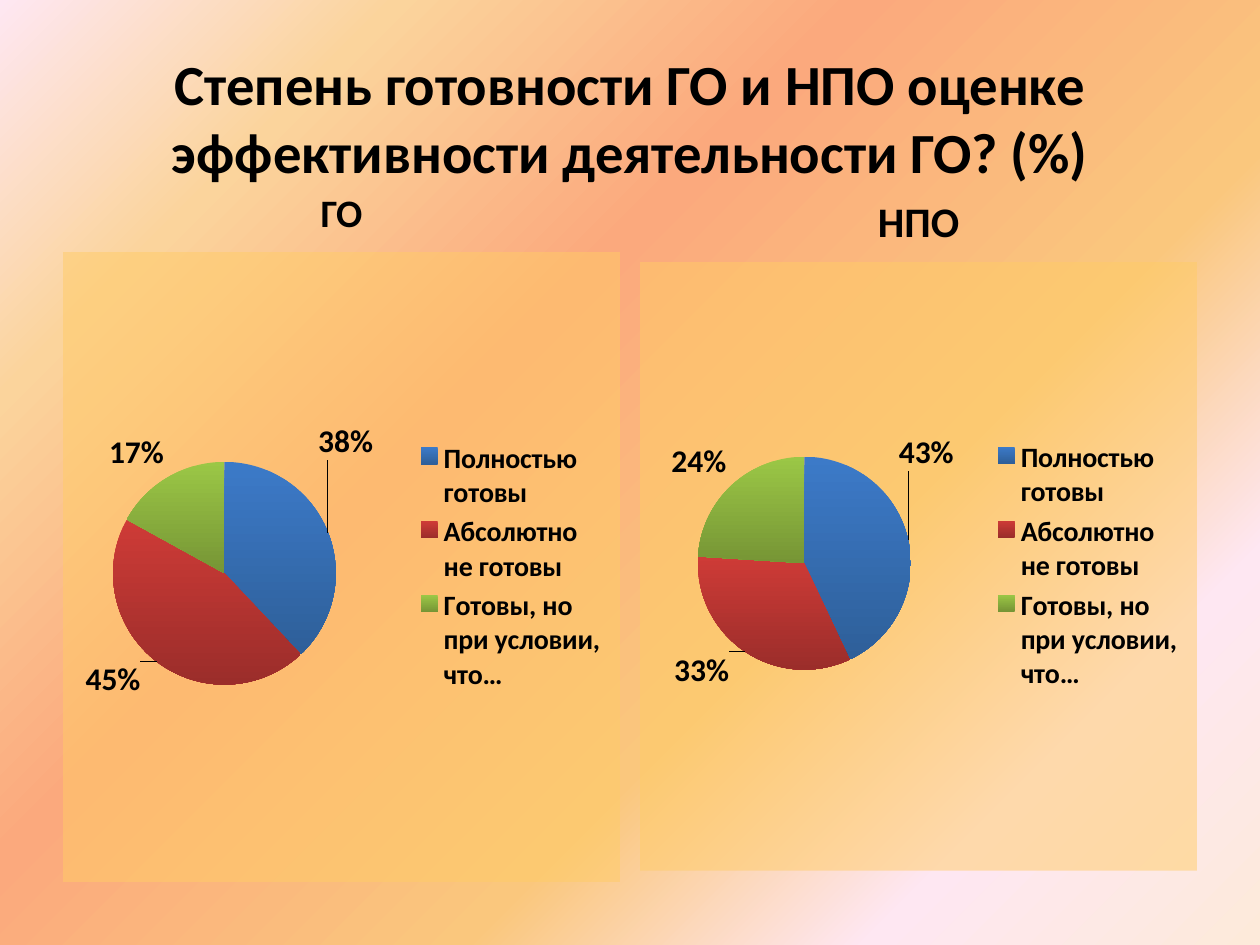
from dataclasses import dataclass

from lxml.etree import SubElement
from pptx import Presentation
from pptx.chart.data import CategoryChartData
from pptx.dml.color import RGBColor
from pptx.enum.chart import XL_CHART_TYPE, XL_LABEL_POSITION, XL_LEGEND_POSITION
from pptx.enum.text import MSO_ANCHOR, PP_ALIGN
from pptx.oxml import parse_xml
from pptx.oxml.ns import nsdecls, qn
from pptx.util import Inches, Pt

BLACK = RGBColor(0x00, 0x00, 0x00)
PANEL = RGBColor(0xFF, 0xCC, 0x66)
SLICES = (
    (RGBColor(0x3C, 0x7A, 0xC8), RGBColor(0x2E, 0x5F, 0x99)),
    (RGBColor(0xCE, 0x3B, 0x37), RGBColor(0x9B, 0x2D, 0x2A)),
    (RGBColor(0x9B, 0xC7, 0x46), RGBColor(0x76, 0x95, 0x35)),
)
BACKGROUND = (
    (0, RGBColor(0xFD, 0xEA, 0xDA)),
    (18, RGBColor(0xFE, 0xE7, 0xF2)),
    (36, RGBColor(0xFA, 0xC7, 0x7D)),
    (61, RGBColor(0xFB, 0xA9, 0x7D)),
    (82, RGBColor(0xFB, 0xD4, 0x9C)),
    (100, RGBColor(0xFE, 0xE7, 0xF2)),
)
CATEGORIES = ("Полностью готовы", "Абсолютно не готовы", "Готовы, но при условии, что…")
LABEL_OFFSETS = ((-0.03, -0.11), (-0.02, -0.01), (0, 0))


@dataclass(frozen=True)
class Box:
    left: float
    top: float
    width: float
    height: float

    def emu(self) -> tuple:
        return tuple(Inches(v) for v in (self.left, self.top, self.width, self.height))


@dataclass(frozen=True)
class Heading:
    text: str
    box: Box
    size: float
    anchor: MSO_ANCHOR = MSO_ANCHOR.BOTTOM


@dataclass(frozen=True)
class Pie:
    box: Box
    values: tuple
    plot: Box


HEADINGS = (
    Heading("Степень готовности ГО и НПО оценке эффективности деятельности ГО? (%)",
            Box(0.5, 0.3, 9, 1.25), 32.4, MSO_ANCHOR.MIDDLE),
    Heading("ГО", Box(0.5, 1.5, 4.42, 0.42), 22.2),
    Heading("НПО", Box(5.08, 1.42, 4.42, 0.58), 24),
)
PIES = (
    Pie(Box(5.08, 2.08, 4.42, 4.83), (43, 33, 24), Box(0.1, 0.32, 0.39, 0.35)),
    Pie(Box(0.5, 2, 4.42, 5), (38, 45, 17), Box(0.09, 0.33, 0.4, 0.36)),
)


def set_font(font, size: float, bold: bool = True) -> None:
    for name, value in {"name": "Calibri", "size": Pt(size), "bold": bold}.items():
        setattr(font, name, value)
    font.color.rgb = BLACK


def paint_background(s) -> None:
    fill = s.background.fill
    fill.gradient()
    fill.gradient_angle = 135
    stops = s.element.find(".//" + qn("a:gsLst"))
    for stop in list(stops):
        stops.remove(stop)
    for position, color in BACKGROUND:
        stop = SubElement(stops, qn("a:gs"), pos=str(position * 1000))
        SubElement(stop, qn("a:srgbClr"), val=str(color))


def add_heading(s, heading: Heading) -> None:
    sp = s.shapes.add_textbox(*heading.box.emu())
    tf = sp.text_frame
    for name, value in {"word_wrap": True, "vertical_anchor": heading.anchor}.items():
        setattr(tf, name, value)
    p = tf.paragraphs[0]
    p.alignment = PP_ALIGN.CENTER
    r = p.add_run()
    r.text = heading.text
    set_font(r.font, heading.size)


def manual_layout(values: dict):
    items = "".join(f'<c:{name} val="{value}"/>' for name, value in values.items())
    return parse_xml(f'<c:layout {nsdecls("c")}><c:manualLayout>{items}'
                     '</c:manualLayout></c:layout>')


def add_pie(s, pie: Pie) -> None:
    data = CategoryChartData()
    data.categories = CATEGORIES
    data.add_series("Series 1", pie.values)
    chart = s.shapes.add_chart(XL_CHART_TYPE.PIE, *pie.box.emu(), data).chart
    chart.has_title = False
    set_font(chart.font, 10, False)
    chart.has_legend = True
    legend = chart.legend
    for name, value in {"position": XL_LEGEND_POSITION.RIGHT, "include_in_layout": False}.items():
        setattr(legend, name, value)
    set_font(legend.font, 16)
    plot = chart.plots[0]
    plot.vary_by_categories = True
    series = plot.series[0]
    set_font(series.data_labels.font, 18)
    for i, colors in enumerate(SLICES):
        point = series.points[i]
        fill = point.format.fill
        fill.gradient()
        fill.gradient_angle = 270
        for stop, color in zip(fill.gradient_stops, colors):
            stop.color.rgb = color
        point.format.line.fill.background()
        set_font(point.data_label.font, 18)
        point.data_label.position = XL_LABEL_POSITION.OUTSIDE_END
    finish_chart(chart.element, pie.plot)


def finish_chart(root, plot: Box) -> None:
    for tag, value in {"c:showVal": "0", "c:showPercent": "1"}.items():
        for flag in root.iter(qn(tag)):
            flag.set("val", value)
    for label, (x, y) in zip(root.iter(qn("c:dLbl")), LABEL_OFFSETS):
        label.insert(1, manual_layout({"x": x, "y": y}))
    area = root.find(".//" + qn("c:plotArea"))
    for old in area.findall(qn("c:layout")):
        area.remove(old)
    area.insert(0, manual_layout({
        "layoutTarget": "inner", "xMode": "edge", "yMode": "edge",
        "x": plot.left, "y": plot.top, "w": plot.width, "h": plot.height}))
    root.find(qn("c:txPr")).addprevious(parse_xml(
        f'<c:spPr {nsdecls("c", "a")}><a:solidFill><a:srgbClr val="{PANEL}">'
        '<a:alpha val="50000"/></a:srgbClr></a:solidFill>'
        '<a:ln><a:noFill/></a:ln></c:spPr>'))


def main() -> None:
    prs = Presentation()
    prs.slide_width, prs.slide_height = Inches(10), Inches(7.5)
    s = prs.slides.add_slide(prs.slide_layouts[6])
    paint_background(s)
    for heading in HEADINGS:
        add_heading(s, heading)
    for pie in PIES:
        add_pie(s, pie)
    prs.save("out.pptx")


if __name__ == "__main__":
    main()
